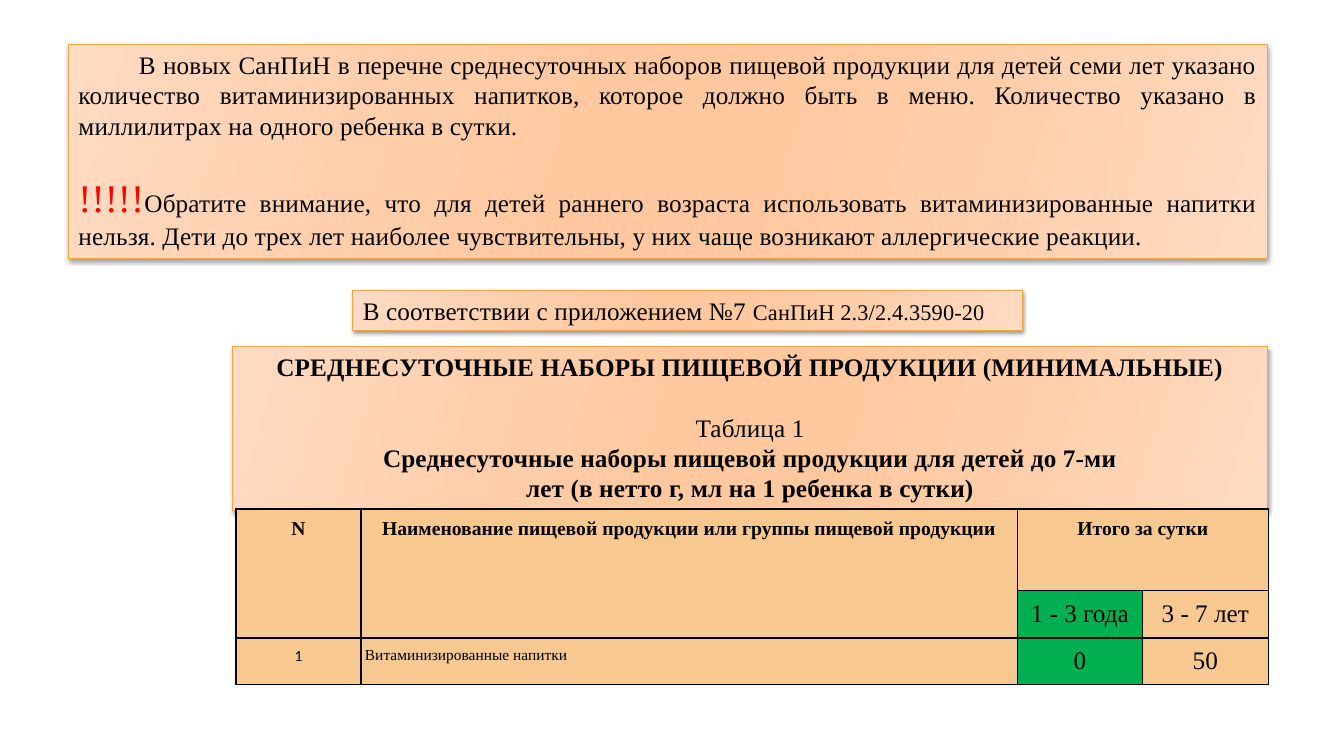
"""Build the slide on vitamin drinks in daily food sets for children."""
from dataclasses import dataclass

from lxml.etree import SubElement
from pptx import Presentation
from pptx.dml.color import RGBColor
from pptx.enum.shapes import MSO_SHAPE
from pptx.enum.text import MSO_ANCHOR, PP_ALIGN
from pptx.oxml.ns import qn
from pptx.util import Inches, Pt

COLORS = {
    "text": "000000",
    "alert": "FF0000",
    "outline": "F3A447",
    "edge": "FFDBC3",
    "middle": "FFCDA8",
    "center": "FFC89F",
    "cell": "F8C891",
    "allowed": "00B050",
}
GRADIENT = ((0, "edge"), (30, "middle"), (45, "center"),
            (55, "center"), (73, "middle"), (100, "edge"))
SERIF = "Times New Roman"


@dataclass(frozen=True)
class Span:
    text: str
    size: float = 18
    bold: bool = False
    color: str = "text"
    font: str = SERIF
    spacing: int = 10


@dataclass(frozen=True)
class Para:
    spans: tuple[Span, ...]
    align: PP_ALIGN = PP_ALIGN.CENTER
    before: float = 0
    indent: float = 0
    line: float = 1.0


@dataclass(frozen=True)
class Panel:
    left: float
    top: float
    width: float
    height: float
    paras: tuple[Para, ...]


@dataclass(frozen=True)
class Entry:
    row: int
    column: int
    span: Span
    align: PP_ALIGN = PP_ALIGN.CENTER
    fill: str = "cell"
    rows: int = 1
    columns: int = 1


PANELS = (
    Panel(0.68, 0.44, 11.89, 2.12, (
        Para((Span("В новых СанПиН в перечне среднесуточных наборов пищевой продукции "
                   "для детей семи лет указано количество витаминизированных напитков, "
                   "которое должно быть в меню. Количество указано в миллилитрах "
                   "на одного ребенка в сутки."),), PP_ALIGN.JUSTIFY, indent=0.6),
        Para((Span("!!!!!", 28, color="alert"),
              Span("Обратите внимание, что для детей раннего возраста использовать "
                   "витаминизированные напитки нельзя. Дети до трех лет наиболее "
                   "чувствительны, у них чаще возникают аллергические реакции.")),
             PP_ALIGN.JUSTIFY, before=23.8),
    )),
    Panel(3.5, 2.88, 6.64, 0.4, (
        Para((Span("В соответствии с приложением №7 "),
              Span("СанПиН 2.3/2.4.3590-20", 16)), PP_ALIGN.LEFT),
    )),
    Panel(2.31, 3.44, 10.26, 1.62, (
        Para((Span("СРЕДНЕСУТОЧНЫЕ НАБОРЫ ПИЩЕВОЙ ПРОДУКЦИИ (МИНИМАЛЬНЫЕ)", bold=True),)),
        Para((Span("Таблица 1"),), before=21.6),
        Para((Span("Среднесуточные наборы пищевой продукции для детей до 7-ми", bold=True),)),
        Para((Span("лет (в нетто г, мл на 1 ребенка в сутки)", bold=True),)),
    )),
)

ENTRIES = (
    Entry(0, 0, Span("N", 14, True, spacing=0), rows=2),
    Entry(0, 1, Span("Наименование пищевой продукции или группы пищевой продукции",
                     14, True, spacing=0), rows=2),
    Entry(0, 2, Span("Итого за сутки", 14, True, spacing=0), columns=2),
    Entry(1, 2, Span("1 - 3 года", spacing=0), fill="allowed"),
    Entry(1, 3, Span("3 - 7 лет", spacing=0)),
    Entry(2, 0, Span("1", 11, font="Calibri", spacing=0)),
    Entry(2, 1, Span("Витаминизированные напитки", 11, spacing=0), PP_ALIGN.LEFT),
    Entry(2, 2, Span("0", spacing=0), fill="allowed"),
    Entry(2, 3, Span("50", spacing=0)),
)


def rgb(name: str) -> RGBColor:
    return RGBColor.from_string(COLORS[name])


def write(frame, paras: tuple[Para, ...]) -> None:
    for index, para in enumerate(paras):
        paragraph = frame.add_paragraph() if index else frame.paragraphs[0]
        paragraph.alignment = para.align
        paragraph.line_spacing = para.line
        paragraph.space_before = Pt(para.before)
        if para.indent:
            paragraph._p.get_or_add_pPr().set("indent", str(Inches(para.indent)))
        for span in para.spans:
            run = paragraph.add_run()
            run.text = span.text
            run.font.name = span.font
            run.font.size = Pt(span.size)
            run.font.bold = span.bold
            run.font.color.rgb = rgb(span.color)
            if span.spacing:
                run.font._element.set("spc", str(span.spacing))


def add_color(parent, name: str):
    return SubElement(parent, qn("a:srgbClr"), val=COLORS[name])


def add_panel(page, panel: Panel) -> None:
    box = page.shapes.add_shape(
        MSO_SHAPE.RECTANGLE, Inches(panel.left), Inches(panel.top),
        Inches(panel.width), Inches(panel.height))
    box.fill.gradient()
    box.fill.gradient_angle = 344
    box.line.color.rgb = rgb("outline")
    box.line.width = Pt(0.75)
    box.shadow.inherit = False
    properties = box._element.spPr
    stops = properties.find(".//" + qn("a:gsLst"))
    for stop in list(stops):
        stops.remove(stop)
    for position, name in GRADIENT:
        add_color(SubElement(stops, qn("a:gs"), pos=str(position * 1000)), name)
    shadow = SubElement(properties.find(qn("a:effectLst")), qn("a:outerShdw"),
                        blurRad=str(Pt(3.1)), dist=str(Pt(1.6)),
                        dir="5400000", rotWithShape="0")
    SubElement(add_color(shadow, "text"), qn("a:alpha"), val="38000")
    box.text_frame.word_wrap = True
    box.text_frame.vertical_anchor = MSO_ANCHOR.TOP
    write(box.text_frame, panel.paras)


def add_borders(cell) -> None:
    properties = cell._tc.get_or_add_tcPr()
    for index, side in enumerate(("lnL", "lnR", "lnT", "lnB")):
        border = properties.makeelement(qn(f"a:{side}"), {"w": str(Pt(1))})
        add_color(SubElement(border, qn("a:solidFill")), "text")
        properties.insert(index, border)


def add_food_table(page) -> None:
    widths, heights = (1.24, 6.51, 1.24, 1.25), (0.81, 0.47, 0.46)
    table = page.shapes.add_table(
        len(heights), len(widths), Inches(2.34), Inches(5.05),
        Inches(sum(widths)), Inches(sum(heights))).table
    table.first_row = table.horz_banding = False
    for column, width in zip(table.columns, widths):
        column.width = Inches(width)
    for row, height in zip(table.rows, heights):
        row.height = Inches(height)
    for cell in table.iter_cells():
        cell.fill.solid()
        cell.fill.fore_color.rgb = rgb("cell")
        cell.margin_left = cell.margin_right = Inches(0.04)
        cell.margin_top = cell.margin_bottom = Inches(0.07)
        add_borders(cell)
    for entry in ENTRIES:
        cell = table.cell(entry.row, entry.column)
        if entry.rows * entry.columns > 1:
            cell.merge(table.cell(entry.row + entry.rows - 1,
                                  entry.column + entry.columns - 1))
        cell.fill.fore_color.rgb = rgb(entry.fill)
        write(cell.text_frame, (Para((entry.span,), entry.align, line=1.07),))


def main() -> None:
    deck = Presentation()
    deck.slide_width, deck.slide_height = Inches(13.33), Inches(7.5)
    page = deck.slides.add_slide(deck.slide_layouts[6])
    for panel in PANELS:
        add_panel(page, panel)
    add_food_table(page)
    deck.save("out.pptx")


if __name__ == "__main__":
    main()
